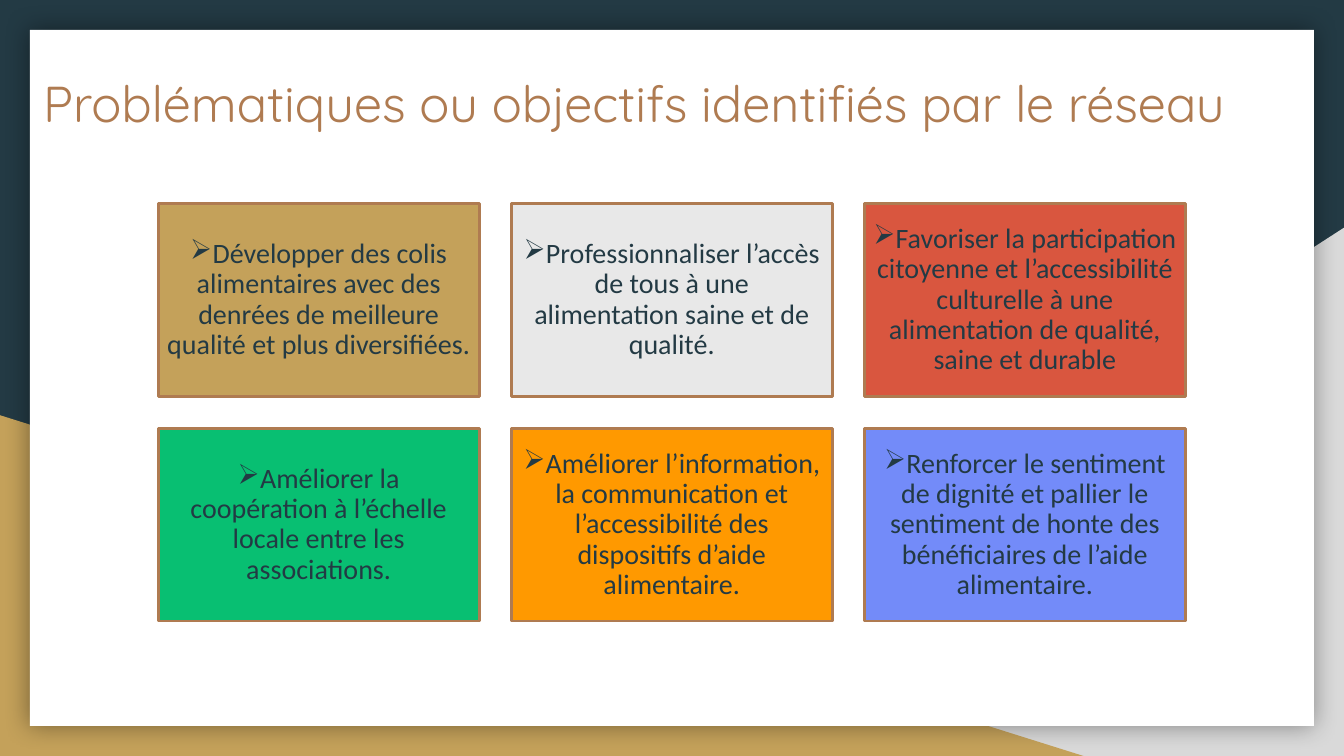
"""Builds a slide with six network goals as a grid of coloured cards."""
from lxml.etree import SubElement
from pptx import Presentation
from pptx.dml.color import RGBColor
from pptx.enum.shapes import MSO_SHAPE
from pptx.enum.text import MSO_ANCHOR, PP_ALIGN
from pptx.oxml.ns import qn
from pptx.util import Pt

TITLE = "Problématiques ou objectifs identifiés par le réseau"
GOALS = [
    ("C4A15A", "Développer des colis alimentaires avec des denrées de meilleure qualité et plus diversifiées."),
    ("E8E8E8", "Professionnaliser l’accès de tous à une alimentation saine et de qualité."),
    ("D9563F", "Favoriser la participation citoyenne et l’accessibilité culturelle à une alimentation de qualité, saine et durable"),
    ("08BF72", "Améliorer la coopération à l’échelle locale entre les associations."),
    ("FF9900", "Améliorer l’information, la communication et l’accessibilité des dispositifs d’aide alimentaire."),
    ("738BF9", "Renforcer le sentiment de dignité et pallier le sentiment de honte des bénéficiaires de l’aide alimentaire."),
]
DARK, SAND, GREY, BROWN, WHITE = "233A44", "C4A15A", "D9D9D9", "AF7B51", "FFFFFF"
WIDE, HIGH = 960, 540
COLS, LEFT, TOP = 3, 113, 145.5
CARD_W, CARD_H, GAP = 229.3, 137.6, 22.9


def paint(fill, color):
    fill.solid()
    fill.fore_color.rgb = RGBColor.from_string(color)


def block(kind, box, color, line=None):
    shape = slide.shapes.add_shape(kind, *map(Pt, box))
    shape.shadow.inherit = False
    paint(shape.fill, color)
    if line:
        paint(shape.line.fill, line)
        shape.line.width = Pt(2)
    else:
        shape.line.fill.background()
    return shape


def write(shape, text, font, size, color, pad, align=PP_ALIGN.LEFT, bullet=None):
    frame = shape.text_frame
    frame.word_wrap = True
    frame.vertical_anchor = MSO_ANCHOR.MIDDLE
    frame.margin_left = frame.margin_right = Pt(pad)
    frame.margin_top = frame.margin_bottom = Pt(pad)
    para = frame.paragraphs[0]
    para.alignment = align
    run = para.add_run()
    run.text = text
    run.font.name = font
    run.font.size = Pt(size)
    run.font.color.rgb = RGBColor.from_string(color)
    if bullet:
        para.line_spacing = 0.9
        para.space_after = Pt(7)
        props = para._p.get_or_add_pPr()
        props.set("marL", "0")
        props.set("indent", "0")
        SubElement(props, qn("a:buChar"), char=bullet)


def shade(shape, color, alpha, blur):
    effects = shape._element.spPr.find(qn("a:effectLst"))
    outer = SubElement(effects, qn("a:outerShdw"), blurRad=str(Pt(blur)),
                       dist="0", dir="0", algn="ctr", rotWithShape="0")
    tint = SubElement(outer, qn("a:srgbClr"), val=color)
    SubElement(tint, qn("a:alpha"), val=str(alpha * 1000))


deck = Presentation()
deck.slide_width, deck.slide_height = Pt(WIDE), Pt(HIGH)
slide = deck.slides.add_slide(deck.slide_layouts[6])
paint(slide.background.fill, DARK)

corner = block(MSO_SHAPE.RIGHT_TRIANGLE, (376, 162.7, 584, 377.3), GREY)
corner._element.spPr.find(qn("a:xfrm")).set("flipH", "1")
block(MSO_SHAPE.RIGHT_TRIANGLE, (0, 296.6, 774, 243.4), SAND)
panel = block(MSO_SHAPE.RECTANGLE, (21.4, 21.4, 917.2, 497.2), WHITE)
shade(panel, "000000", alpha=40, blur=18)

title = slide.shapes.add_textbox(Pt(21.2), Pt(23), Pt(916.6), Pt(100))
write(title, TITLE, font="Quicksand", size=36, color=BROWN, pad=9.6)

for spot, (color, goal) in enumerate(GOALS):
    row, col = divmod(spot, COLS)
    box = (LEFT + col * (CARD_W + GAP), TOP + row * (CARD_H + GAP), CARD_W, CARD_H)
    card = block(MSO_SHAPE.RECTANGLE, box, color, line=BROWN)
    write(card, goal, font="Calibri", size=20, color=DARK, pad=6,
          align=PP_ALIGN.CENTER, bullet="➢")

deck.save("out.pptx")
